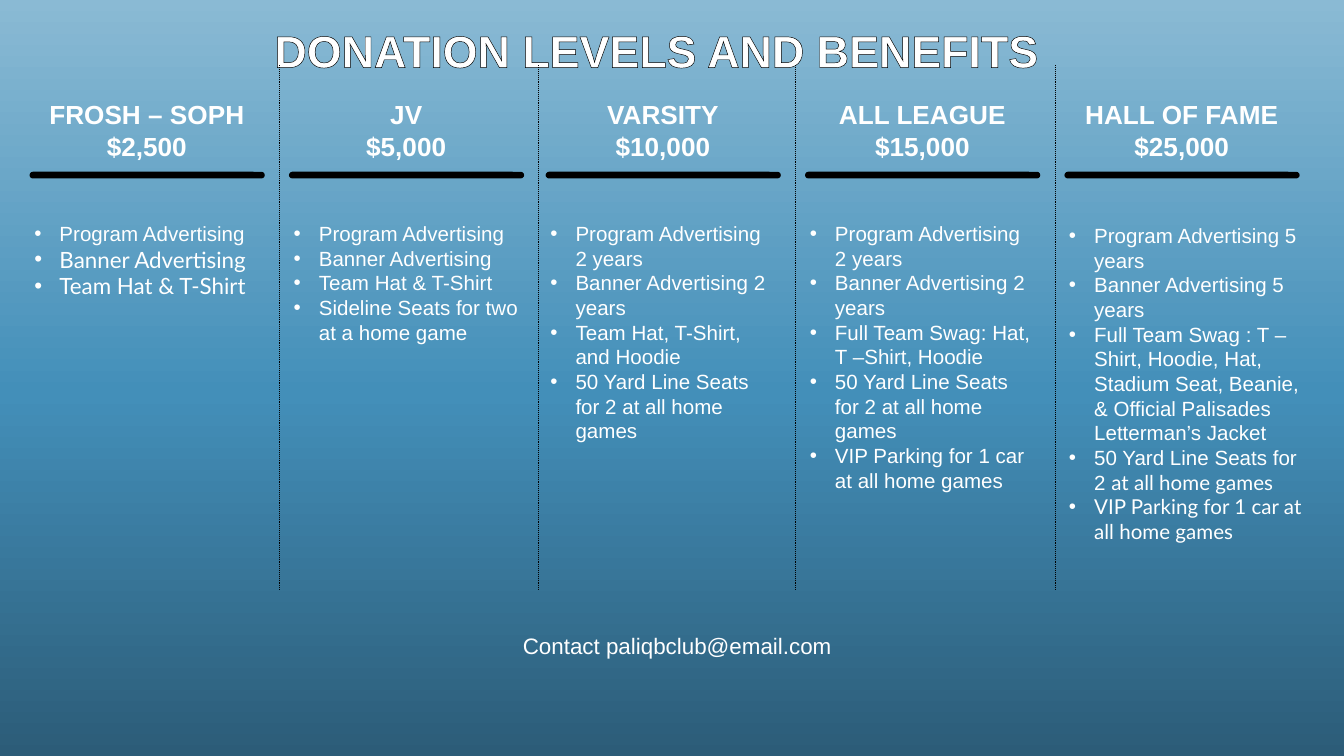
from copy import deepcopy
from dataclasses import dataclass
from itertools import zip_longest

from lxml.etree import SubElement
from pptx import Presentation
from pptx.dml.color import RGBColor as RGB
from pptx.enum.dml import MSO_LINE_DASH_STYLE as DASH
from pptx.enum.shapes import MSO_CONNECTOR as CONNECTOR, MSO_SHAPE as SHAPE
from pptx.enum.text import MSO_ANCHOR as ANCHOR, MSO_AUTO_SIZE as AUTO, PP_ALIGN as ALIGN
from pptx.oxml.ns import qn
from pptx.util import Inches, Pt

COLORS = {"text": "FFFFFF", "rule": "000000", "low": "2C5C78", "mid": "438FB9", "high": "8ABAD4"}
WIDTH = Inches(10)
HEIGHT = WIDTH * 9 // 16
PITCH = 19.3
INDENT = Pt(13.5)


@dataclass
class Box:
    left: float
    top: float
    width: float
    height: float

    def emu(self) -> tuple[int, int, int, int]:
        return (int(self.left * WIDTH / 100), int(self.top * HEIGHT / 100),
                int(self.width * WIDTH / 100), int(self.height * HEIGHT / 100))


@dataclass
class Run:
    text: str
    font: str = "Arial"
    size: float | None = None


@dataclass
class Level:
    name: str
    price: str
    benefits: list
    height: float
    top: float = 28.35
    width: float = 18.75


LEVELS = [
    Level("FROSH – SOPH", "$2,500", [
        "Program Advertising",
        [Run("Banner Advertising", "Lato", 12)],
        [Run("Team Hat & T-Shirt", "Lato", 12)]], 12.28),
    Level("JV", "$5,000", [
        "Program Advertising", "Banner Advertising", "Team Hat & T-Shirt",
        "Sideline Seats for two at a home game"], 21.89),
    Level("VARSITY", "$10,000", [
        "Program Advertising 2 years", "Banner Advertising 2 years",
        "Team Hat, T-Shirt, and Hoodie",
        "50 Yard Line Seats for 2 at all home games"], 31.49),
    Level("ALL LEAGUE", "$15,000", [
        "Program Advertising 2 years", "Banner Advertising 2 years",
        "Full Team Swag: Hat, T –Shirt, Hoodie",
        "50 Yard Line Seats for 2 at all home games",
        "VIP Parking for 1 car at all home games"], 38.08),
    Level("HALL OF FAME", "$25,000", [
        "Program Advertising 5 years", "Banner Advertising 5 years",
        "Full Team Swag : T –Shirt, Hoodie, Hat, Stadium Seat, Beanie, "
        "& Official Palisades Letterman’s Jacket",
        [Run("50 Yard Line Seats for 2 "), Run("at all home games", "Lato")],
        [Run("VIP Parking for 1 car at all home games", "Lato")]], 47.86, 28.65, 19.9),
]


def column(start: float, index: int) -> float:
    return start + PITCH * index - (0.2 if index > 1 else 0)


def add_bullet(p) -> None:
    pPr = p._p.get_or_add_pPr()
    pPr.set("marL", str(INDENT))
    pPr.set("indent", str(-INDENT))
    SubElement(pPr, qn("a:buFont")).set("typeface", "Arial")
    SubElement(pPr, qn("a:buChar")).set("char", "•")


def add_text(slide, box: Box, paragraphs: list, *, size: float, bold: bool = False,
             align=ALIGN.CENTER, bullets: bool = False, margin: float = 0.05,
             outline: float = 0, placeholder=None):
    sp = placeholder or slide.shapes.add_textbox(*box.emu())
    sp.left, sp.top, sp.width, sp.height = box.emu()
    tf = sp.text_frame
    tf.word_wrap = True
    tf.auto_size = AUTO.SHAPE_TO_FIT_TEXT
    tf.vertical_anchor = ANCHOR.TOP
    tf.margin_left = tf.margin_right = Inches(0.1)
    tf.margin_top = tf.margin_bottom = Inches(margin)
    for i, content in enumerate(paragraphs):
        p = tf.add_paragraph() if i else tf.paragraphs[0]
        if bullets:
            add_bullet(p)
        p.alignment = align
        p.space_before = Pt(0)
        for run in [Run(content)] if isinstance(content, str) else content:
            r = p.add_run()
            r.text = run.text
            r.font.name = run.font
            r.font.size = Pt(run.size or size)
            r.font.bold = bold
            r.font.color.rgb = RGB.from_string(COLORS["text"])
            if outline:
                rPr = r.font._element
                ln = SubElement(rPr, qn("a:ln"), w=str(Pt(outline)))
                fill = SubElement(ln, qn("a:solidFill"))
                SubElement(fill, qn("a:srgbClr"), val=COLORS["rule"])
                rPr.insert(0, ln)
    return sp


def add_divider(slide, x: float) -> None:
    left, top, _, height = Box(x, 8.65, 0, 69.35).emu()
    line = slide.shapes.add_connector(CONNECTOR.STRAIGHT, left, top, left, top + height)
    line.line.width = Pt(0.5)
    line.line.color.rgb = RGB.from_string(COLORS["rule"])
    line.line.dash_style = DASH.ROUND_DOT
    SubElement(line._element.spPr, qn("a:effectLst"))


def add_rule(slide, x: float) -> None:
    sp = slide.shapes.add_shape(SHAPE.ROUNDED_RECTANGLE, *Box(x, 22.72, 17.5, 0.89).emu())
    sp.adjustments[0] = 0.5
    sp.shadow.inherit = False
    sp.fill.solid()
    sp.fill.fore_color.rgb = RGB.from_string(COLORS["rule"])
    sp.line.fill.background()


def add_level(slide, index: int, level: Level, placeholder) -> None:
    x = column(1.55, index)
    add_text(slide, Box(x, level.top, level.width, level.height), level.benefits,
             size=11, align=ALIGN.LEFT, bullets=True, placeholder=placeholder)
    add_text(slide, Box(x, 12.2, 18.75, 10.14), [level.name, level.price], size=14, bold=True)
    add_rule(slide, column(2.2, index))


def set_background(slide) -> None:
    fill = slide.background.fill
    fill.gradient()
    fill.gradient_angle = 90
    stops = slide.element.find(".//" + qn("a:gsLst"))
    stops.insert(1, deepcopy(stops[0]))
    for stop, name, position in zip(fill.gradient_stops, ("low", "mid", "high"), (0, 0.48, 1)):
        stop.color.rgb = RGB.from_string(COLORS[name])
        stop.position = position


def main() -> None:
    prs = Presentation()
    prs.slide_width, prs.slide_height = WIDTH, HEIGHT
    slide = prs.slides.add_slide(prs.slide_layouts.get_by_name("Comparison"))
    set_background(slide)
    title, *bodies = [sp for sp in slide.placeholders if sp.placeholder_format.idx < 10]
    for i in range(len(LEVELS) - 1):
        add_divider(slide, column(20.8, i))
    for i, (level, body) in enumerate(zip_longest(LEVELS, bodies)):
        add_level(slide, i, level, body)
    add_text(slide, Box(2.2, 3.02, 93.3, 7.12), ["DONATION LEVELS AND BENEFITS"],
             size=24, bold=True, margin=0, outline=0.05, placeholder=title)
    add_text(slide, Box(0.8, 82.7, 99.2, 5.34), ["Contact paliqbclub@email.com"], size=12)
    prs.save("out.pptx")


if __name__ == "__main__":
    main()
